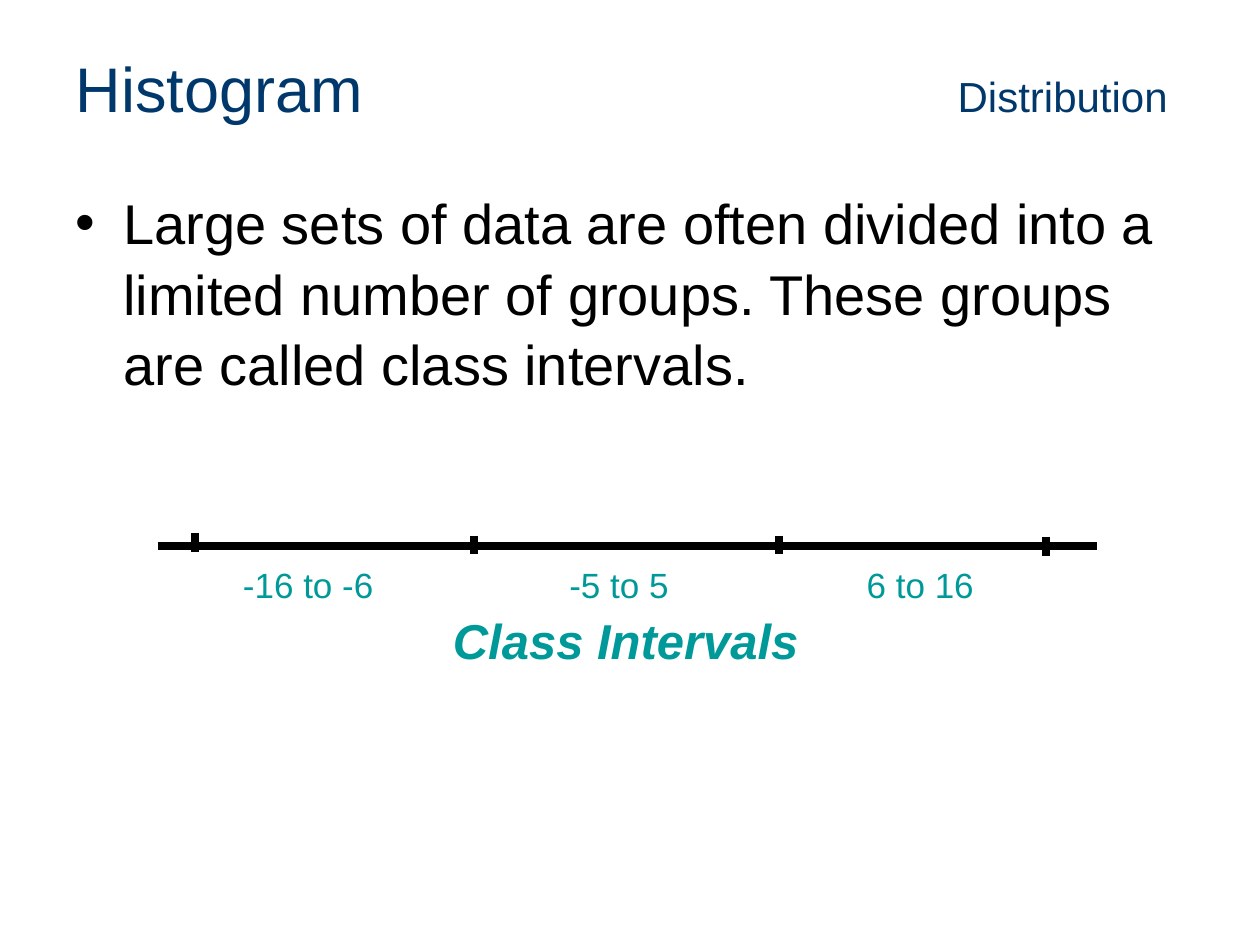
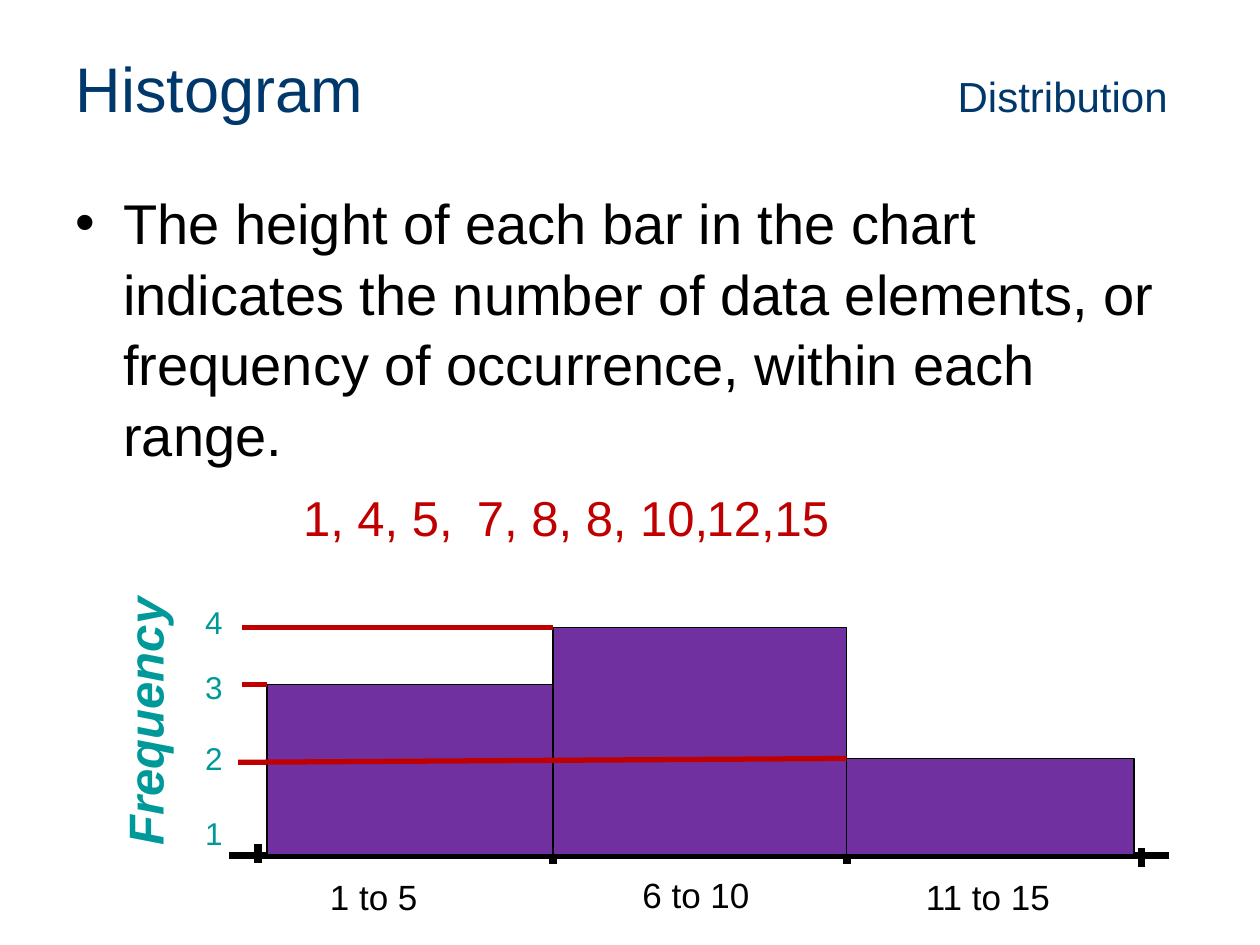
"""Build two slides that explain histograms: class intervals and bar heights."""
from dataclasses import dataclass

from lxml.etree import SubElement
from pptx import Presentation
from pptx.dml.color import RGBColor
from pptx.enum.shapes import MSO_CONNECTOR, MSO_SHAPE
from pptx.enum.text import MSO_ANCHOR, MSO_AUTO_SIZE, PP_ALIGN
from pptx.oxml.ns import qn
from pptx.util import Inches, Pt


@dataclass(frozen=True)
class Theme:
    font: str = "Arial"
    navy: RGBColor = RGBColor(0x00, 0x38, 0x6B)
    black: RGBColor = RGBColor(0x00, 0x00, 0x00)
    teal: RGBColor = RGBColor(0x00, 0x99, 0x99)
    red: RGBColor = RGBColor(0xC0, 0x00, 0x00)
    purple: RGBColor = RGBColor(0x70, 0x30, 0xA0)
    title: int = 36
    body: int = 32
    heading: int = 28
    topic: int = 24
    label: int = 20
    scale: int = 18
    axis_width: float = 4.5
    guide_width: float = 3
    bar_outline: float = 0.75


theme = Theme()


def add_text(slide, text, box, size, color, **formats):
    """Add a wrapped text box and return it."""
    shape = slide.shapes.add_textbox(*map(Inches, box))
    shape.text_frame.word_wrap = True
    run = shape.text_frame.paragraphs[0].add_run()
    run.text = text
    run.font.color.rgb = color
    for name, value in {"name": theme.font, "size": Pt(size), **formats}.items():
        setattr(run.font, name, value)
    return shape


def add_line(slide, start, end, color, width):
    """Add a straight line without a shadow."""
    line = slide.shapes.add_connector(MSO_CONNECTOR.STRAIGHT, *map(Inches, (*start, *end)))
    line.line.color.rgb = color
    line.line.width = Pt(width)
    SubElement(line._element.spPr, qn("a:effectLst"))


presentation = Presentation()
presentation.slide_width, presentation.slide_height = Inches(10), Inches(7.5)

body_texts = [
    "Large sets of data are often divided into a limited number of groups. "
    "These groups are called class intervals.",
    "The height of each bar in the chart indicates the number of data elements, "
    "or frequency of occurrence, within each range.",
]
slides = []
for body_text in body_texts:
    slide = presentation.slides.add_slide(presentation.slide_layouts[5])
    slides.append(slide)

    title = slide.shapes.title
    placement = {"left": 0.5, "top": 0.3, "width": 9, "height": 0.78}
    for name, value in placement.items():
        setattr(title, name, Inches(value))
    title.text_frame.auto_size = MSO_AUTO_SIZE.NONE
    title.text_frame.vertical_anchor = MSO_ANCHOR.MIDDLE
    paragraph = title.text_frame.paragraphs[0]
    paragraph.alignment = PP_ALIGN.LEFT
    for text, size in (("Histogram\t", theme.title), ("Distribution", theme.topic)):
        run = paragraph.add_run()
        run.text = text
        run.font.color.rgb = theme.navy
        for name, value in {"name": theme.font, "size": Pt(size)}.items():
            setattr(run.font, name, value)
    tab_stops = SubElement(paragraph._p.get_or_add_pPr(), qn("a:tabLst"))
    SubElement(tab_stops, qn("a:tab"), pos=str(Inches(7)), algn="l")

    body = add_text(slide, body_text, (0.5, 1.42, 9, 5.28), theme.body, theme.black)
    paragraph = body.text_frame.paragraphs[0]
    paragraph.line_spacing = 1.05
    properties = paragraph._p.get_or_add_pPr()
    for name, value in {"marL": 0.38, "indent": -0.38}.items():
        properties.set(name, str(Inches(value)))
    SubElement(properties, qn("a:buFont"), typeface=theme.font)
    SubElement(properties, qn("a:buChar"), char="•")

interval_slide, frequency_slide = slides

add_line(interval_slide, (1.25, 4.33), (8.71, 4.33), theme.black, theme.axis_width)
for x, top in ((1.55, 4.23), (3.76, 4.25), (6.18, 4.25), (8.3, 4.26)):
    add_line(interval_slide, (x, top), (x, top + 0.15), theme.black, theme.axis_width)
for text, left, width in (("-16 to -6", 1.83, 1.26), ("-5 to 5", 4.42, 1.04), ("6 to 16", 6.78, 1.09)):
    add_text(interval_slide, text, (left, 4.42, width, 0.43), theme.label, theme.teal)

axis_titles = [
    (interval_slide, "Class Intervals", (3.02, 4.8, 3.89, 0.57), 0),
    (frequency_slide, "Frequency", (-0.12, 5.44, 2.53, 0.57), 270),
]
for slide, text, box, rotation in axis_titles:
    axis_title = add_text(slide, text, box, theme.heading, theme.teal, bold=True, italic=True)
    axis_title.rotation = rotation
    axis_title.text_frame.paragraphs[0].alignment = PP_ALIGN.CENTER

for value, top in ((1, 6.41), (2, 5.82), (3, 5.25), (4, 4.74)):
    add_text(frequency_slide, str(value), (1.53, top, 0.35, 0.4), theme.scale, theme.teal)

add_line(frequency_slide, (1.82, 6.79), (9.28, 6.79), theme.black, theme.axis_width)
for index, top in enumerate((6.7, 6.71, 6.71, 6.73)):
    x = 2.05 + index * 7.01 / 3
    add_line(frequency_slide, (x, top), (x, top + 0.15), theme.black, theme.axis_width)

baseline = 6.78
for left, top, width in ((4.39, 4.98, 2.33), (2.12, 5.43, 2.27), (6.72, 6.02, 2.28)):
    box = (left, top, width, baseline - top)
    bar = frequency_slide.shapes.add_shape(MSO_SHAPE.RECTANGLE, *map(Inches, box))
    bar.shadow.inherit = False
    bar.fill.solid()
    bar.fill.fore_color.rgb = theme.purple
    bar.line.color.rgb = theme.black
    bar.line.width = Pt(theme.bar_outline)

for text, left, top, width in (("1 to 5", 2.52, 6.9, 1.26), ("6 to 10", 5, 6.88, 1.08), ("11 to 15", 7.25, 6.9, 1.44)):
    add_text(frequency_slide, text, (left, top, width, 0.44), theme.label, theme.black)

for text, left, width in ((" 1, 4, 5,", 2.2, 1.97), (" 7, 8, 8, 10,", 3.58, 2.23), ("12,15", 5.51, 1.32)):
    add_text(frequency_slide, text, (left, 3.82, width, 0.57), theme.heading, theme.red)

for start, end in (((2.12, 5.43), (1.92, 5.43)), ((4.39, 4.98), (1.92, 4.98)), ((6.72, 6.02), (1.89, 6.05))):
    add_line(frequency_slide, start, end, theme.red, theme.guide_width)

presentation.save("out.pptx")
